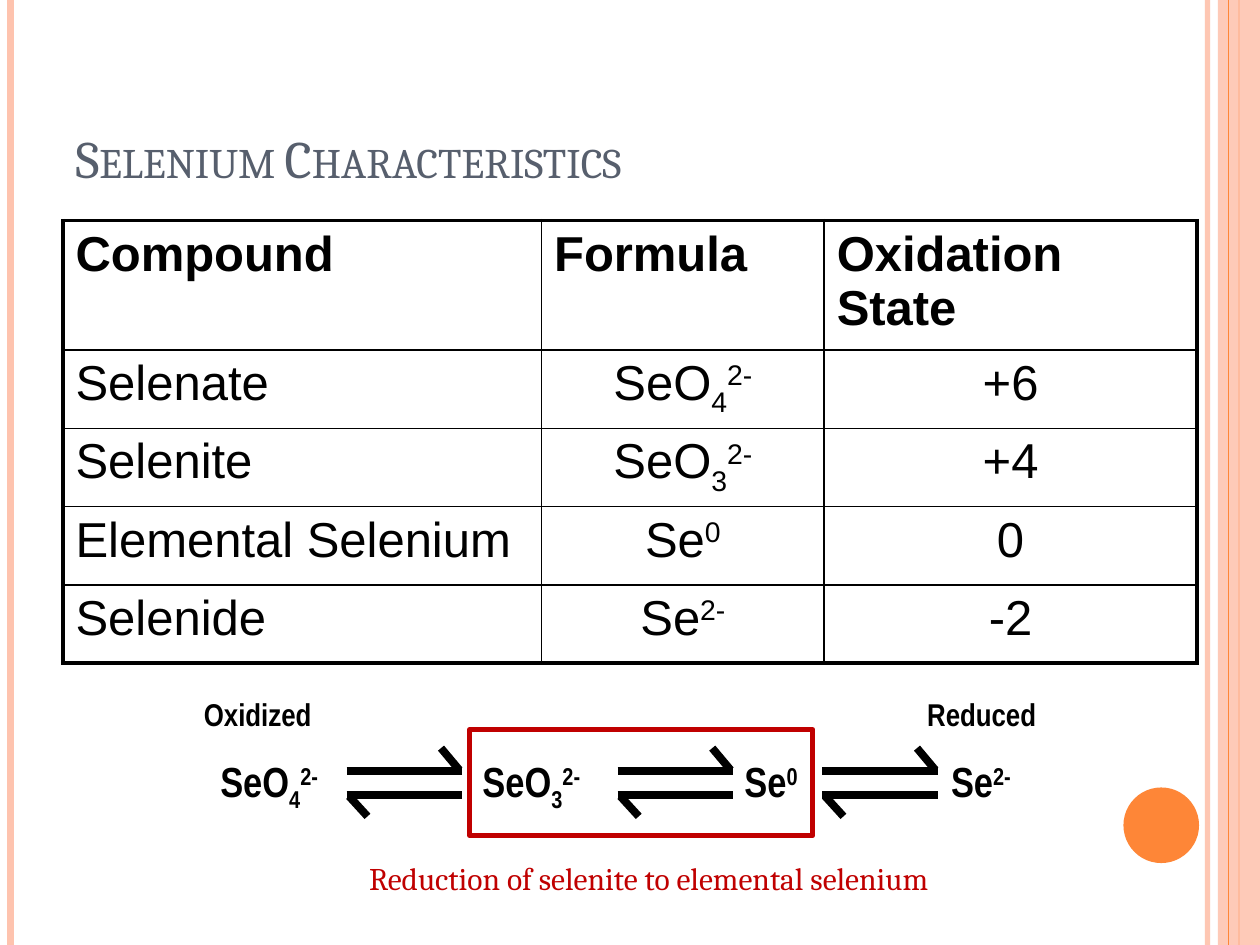
import pptx
import pptx.util
import pptx.dml.color
import pptx.oxml
import pptx.oxml.ns
import pptx.enum.shapes
import pptx.enum.text
from pptx.util import Pt

BLACK, RED, ORANGE, PEACH, SLATE = "000000", "C00000", "FE8637", "FEC3AE", "575F6D"
SHAPE = pptx.enum.shapes.MSO_SHAPE
ALIGN = pptx.enum.text.PP_ALIGN
AUTO_SIZE = pptx.enum.text.MSO_AUTO_SIZE
SUBSCRIPT, SUPERSCRIPT = -25000, 30000

# Each formula is a list of (text, baseline shift) spans
SELENATE = [("SeO", 0), ("4", SUBSCRIPT), ("2-", SUPERSCRIPT)]
SELENITE = [("SeO", 0), ("3", SUBSCRIPT), ("2-", SUPERSCRIPT)]
ELEMENTAL = [("Se", 0), ("0", SUPERSCRIPT)]
SELENIDE = [("Se", 0), ("2-", SUPERSCRIPT)]

ROWS = [
    ("Compound", "Formula", "Oxidation State"),
    ("Selenate", SELENATE, "+6"),
    ("Selenite", SELENITE, "+4"),
    ("Elemental Selenium", ELEMENTAL, "0"),
    ("Selenide", SELENIDE, "-2"),
]


def color(value):
    return pptx.dml.color.RGBColor.from_string(value)


def write(frame, content, size, font, ink=BLACK, bold=False, align=ALIGN.LEFT, small_caps=False):
    """Write a plain string or a list of (text, baseline) spans."""
    para = frame.paragraphs[0]
    para.alignment = align
    spans = [(content, 0)] if isinstance(content, str) else content
    for text, baseline in spans:
        span = para.add_run()
        span.text = text
        span.font.size = Pt(size)
        span.font.name = font
        span.font.bold = bold
        span.font.color.rgb = color(ink)
        properties = span._r.get_or_add_rPr()
        if baseline:
            properties.set("baseline", str(baseline))
        if small_caps:
            properties.set("cap", "small")


def set_opacity(shape, percent):
    for node in shape._element.xpath("./p:spPr//a:srgbClr"):
        alpha = pptx.oxml.parse_xml(
            f'<a:alpha {pptx.oxml.ns.nsdecls("a")} val="{percent * 1000}"/>')
        node.append(alpha)


def add_line(shapes, start, end, ink, weight):
    line = shapes.add_connector(
        pptx.enum.shapes.MSO_CONNECTOR.STRAIGHT, *map(Pt, start + end))
    line.line.color.rgb = color(ink)
    line.line.width = Pt(weight)
    line._element.spPr.append(
        pptx.oxml.parse_xml(f'<a:effectLst {pptx.oxml.ns.nsdecls("a")}/>'))
    return line


def add_shape(slide, kind, bounds, fill=None, outline=None, weight=0):
    shape = slide.shapes.add_shape(kind, *map(Pt, bounds))
    shape.shadow.inherit = False
    if fill:
        shape.fill.solid()
        shape.fill.fore_color.rgb = color(fill)
    else:
        shape.fill.background()
    if outline:
        shape.line.color.rgb = color(outline)
        shape.line.width = Pt(weight)
    else:
        shape.line.fill.background()
    return shape


def add_label(slide, bounds, content, **text_format):
    box = slide.shapes.add_textbox(*map(Pt, bounds))
    box.text_frame.word_wrap = False
    box.text_frame.auto_size = AUTO_SIZE.SHAPE_TO_FIT_TEXT
    write(box.text_frame, content, **text_format)


def add_decoration(slide):
    for x, ink, weight, opacity in [(690, PEACH, 3, 93), (6, PEACH, 4.5, 100),
                                    (708, ORANGE, 1.5, 100)]:
        line = add_line(slide.shapes, (x, 0), (x, 540), ink, weight)
        if opacity < 100:
            set_opacity(line, opacity)
    band = add_shape(slide, SHAPE.RECTANGLE, (696, 0, 24, 540), fill=PEACH)
    set_opacity(band, 87)
    add_line(slide.shapes, (702, 0), (702, 540), ORANGE, 0.75)
    add_shape(slide, SHAPE.OVAL, (642, 450, 43.2, 43.2), fill=ORANGE)


def add_title(slide, text):
    title = slide.shapes.title
    title.left, title.top, title.width, title.height = map(Pt, (36, 21.6, 648, 90))
    frame = title.text_frame
    frame.auto_size = AUTO_SIZE.NONE
    frame.vertical_anchor = pptx.enum.text.MSO_ANCHOR.BOTTOM
    write(frame, text, size=30, font="Cambria", ink=SLATE, small_caps=True)


def set_borders(cell, weights):
    properties = cell._tc.get_or_add_tcPr()
    for side, weight in weights.items():
        properties.append(pptx.oxml.parse_xml(
            f'<a:ln{side} {pptx.oxml.ns.nsdecls("a")} w="{Pt(weight)}">'
            f'<a:solidFill><a:srgbClr val="{BLACK}"/></a:solidFill></a:ln{side}>'))


def add_compound_table(slide):
    widths, heights = (273.5, 161.5, 213), (74, *[44.75] * 4)
    table = slide.shapes.add_table(
        len(heights), len(widths), Pt(36), Pt(126), Pt(sum(widths)), Pt(sum(heights))).table
    table.first_row = table.horz_banding = False
    for column, width in zip(table.columns, widths):
        column.width = Pt(width)
    for row, height in zip(table.rows, heights):
        row.height = Pt(height)

    outer, inner = 2.25, 1
    last_row, last_column = len(heights) - 1, len(widths) - 1
    for i, contents in enumerate(ROWS):
        for j, content in enumerate(contents):
            cell = table.cell(i, j)
            set_borders(cell, {
                "L": outer if j == 0 else inner,
                "R": outer if j == last_column else inner,
                "T": outer if i == 0 else inner,
                "B": outer if i == last_row else inner,
            })
            cell.fill.background()
            centred = i > 0 and j > 0
            write(cell.text_frame, content, size=28, font="Arial", bold=i == 0,
                  align=ALIGN.CENTER if centred else ALIGN.LEFT)


def add_equilibrium_arrow(slide, left):
    """Two opposed half arrows, each a shaft and one barb."""
    group = slide.shapes.add_group_shape()
    for start, end in [((0, 440.5), (66, 440.5)), ((64.5, 440), (54, 427.5)),
                       ((0, 454.5), (66, 454.5)), ((1.5, 455), (12, 466.5))]:
        add_line(group.shapes, (left + start[0], start[1]),
                 (left + end[0], end[1]), BLACK, 4.5)


def add_reaction(slide):
    for left, width, formula in [(118.8, 72.7, SELENATE), (268.6, 72.7, SELENITE),
                                 (418.3, 46, ELEMENTAL), (536.4, 50.4, SELENIDE)]:
        add_label(slide, (left, 428.4, width, 36), formula,
                  size=24, font="Arial Narrow", bold=True)
    for left in (198, 353, 470):
        add_equilibrium_arrow(slide, left)
    for left, text in [(109.4, "Oxidized"), (522.7, "Reduced")]:
        add_label(slide, (left, 393.8, 76.5, 29), text,
                  size=18, font="Arial Narrow", bold=True)

    # Highlighted step and its caption
    add_shape(slide, SHAPE.RECTANGLE, (268.5, 417, 196, 60.5), outline=RED, weight=3)
    add_label(slide, (203.8, 487.4, 381, 29), "Reduction of selenite to elemental selenium",
              size=18, font="Cambria", ink=RED)


def main():
    deck = pptx.Presentation()
    deck.slide_width, deck.slide_height = Pt(720), Pt(540)
    slide = deck.slides.add_slide(deck.slide_layouts[5])
    add_decoration(slide)
    add_title(slide, "Selenium Characteristics")
    add_compound_table(slide)
    add_reaction(slide)
    deck.save("out.pptx")


if __name__ == "__main__":
    main()
